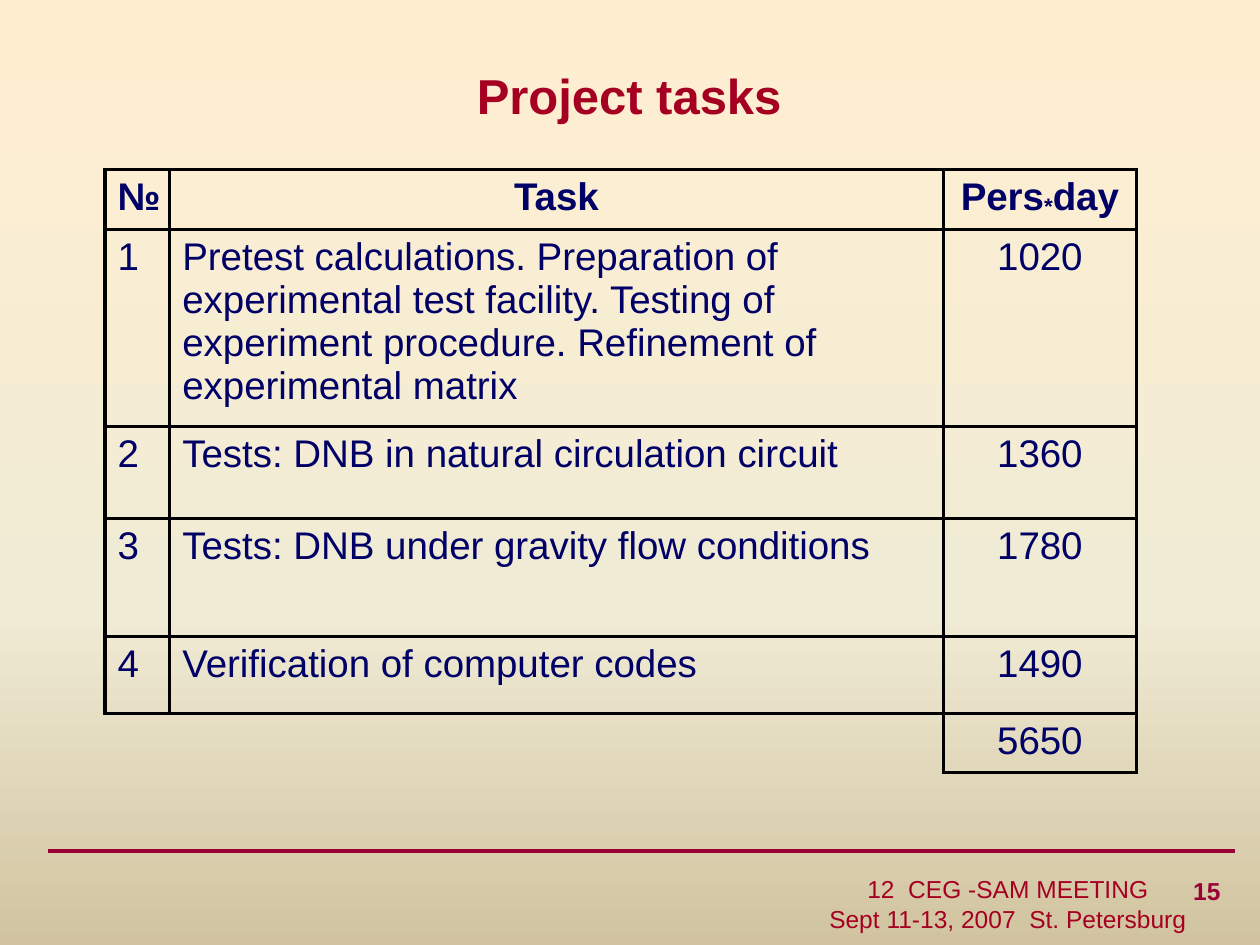
from copy import deepcopy
from dataclasses import dataclass

from pptx import Presentation
from pptx.dml.color import RGBColor as Rgb
from pptx.enum.shapes import MSO_CONNECTOR as Connector
from pptx.enum.text import MSO_ANCHOR as Anchor, PP_ALIGN as Align
from pptx.oxml.ns import qn
from pptx.oxml.xmlchemy import OxmlElement as Element
from pptx.util import Pt


@dataclass(frozen=True)
class Theme:
    font: str = "Arial"
    title_color: str = "A50021"
    accent: str = "990033"
    body_color: str = "000066"
    border_color: str = "000000"
    background: tuple = ((0, "FFEFD1"), (0.65, "F0EBD5"), (1, "D1C39F"))
    title_size: float = 28
    table_size: float = 22
    footer_size: float = 14
    line_width: float = 2.25


THEME = Theme()
PLAIN_TABLE = "{2D5ABB26-0587-4C30-8999-92F81FD0307C}"
COLUMNS = (37, 442, 110.5)
ROWS = (34, 105.5, 52.5, 67.5, 44, 32.5)
TASKS = (
    ("1", "Pretest calculations. Preparation of experimental test facility. "
          "Testing of experiment procedure. Refinement of experimental matrix", "1020"),
    ("2", "Tests: DNB in natural circulation circuit", "1360"),
    ("3", "Tests: DNB under gravity flow conditions", "1780"),
    ("4", "Verification of computer codes", "1490"),
)
HANGING_TASKS = ("3", "4")


def apply(target, formats):
    for name, value in formats.items():
        setattr(target, name, value)


class SlideBuilder:
    def __init__(self, deck, theme):
        self.theme = theme
        self.page = deck.slides.add_slide(deck.slide_layouts[6])

    def background(self):
        fill = self.page.background.fill
        fill.gradient()
        fill.gradient_angle = 270
        stop_list = self.page._element.find(".//" + qn("a:gsLst"))
        stop_list.append(deepcopy(stop_list[-1]))
        for stop, (position, color) in zip(fill.gradient_stops, self.theme.background):
            stop.position = position
            stop.color.rgb = Rgb.from_string(color)

    def add_span(self, para, text, size, color, bold=False, align=Align.LEFT):
        para.alignment = align
        span = para.add_run()
        span.text = text
        apply(span.font, {"name": self.theme.font, "size": Pt(size), "bold": bold})
        span.font.color.rgb = Rgb.from_string(color)
        return span

    def text(self, area, lines, size, color, bold=False, align=Align.CENTER,
             anchor=Anchor.MIDDLE):
        box = self.page.shapes.add_textbox(*map(Pt, area))
        frame = box.text_frame
        apply(frame, {"word_wrap": True, "vertical_anchor": anchor})
        for index, line in enumerate(lines):
            para = frame.add_paragraph() if index else frame.paragraphs[0]
            self.add_span(para, line, size, color, bold, align)

    def rule(self, left, right, top):
        line = self.page.shapes.add_connector(
            Connector.STRAIGHT, Pt(left), Pt(top), Pt(right), Pt(top))
        line.line.width = Pt(self.theme.line_width)
        line.line.color.rgb = Rgb.from_string(self.theme.accent)
        line._element.spPr.append(Element("a:effectLst"))

    def table(self, left, top, columns, rows):
        shape = self.page.shapes.add_table(
            len(rows), len(columns), Pt(left), Pt(top), Pt(sum(columns)), Pt(sum(rows)))
        table = shape.table
        apply(table, {"first_row": False, "horz_banding": False})
        table._tbl.tblPr.find(qn("a:tableStyleId")).text = PLAIN_TABLE
        for column, width in zip(table.columns, columns):
            column.width = Pt(width)
        for row, height in zip(table.rows, rows):
            row.height = Pt(height)
        return table

    def cell(self, cell, spans, bold=False, align=Align.LEFT, edges="LRTB"):
        """Fill a cell with (text, baseline percent) spans and draw the named edges."""
        para = cell.text_frame.paragraphs[0]
        for text, baseline in spans:
            span = self.add_span(para, text, self.theme.table_size,
                                 self.theme.body_color, bold, align)
            if baseline:
                span._r.get_or_add_rPr().set("baseline", str(baseline * 1000))
        for edge in "LRTB":
            self.border(cell, edge, edge in edges)
        cell.fill.background()
        return para

    def border(self, cell, edge, visible):
        line = Element(f"a:ln{edge}")
        if visible:
            line.set("w", str(Pt(self.theme.line_width)))
            fill, color = Element("a:solidFill"), Element("a:srgbClr")
            color.set("val", self.theme.border_color)
            fill.append(color)
        else:
            fill = Element("a:noFill")
        line.append(fill)
        cell._tc.get_or_add_tcPr().append(line)

    def hang(self, para, indent, after):
        apply(para, {"alignment": Align.JUSTIFY, "space_after": Pt(after)})
        properties = para._p.get_or_add_pPr()
        properties.set("marL", str(Pt(indent)))
        properties.set("indent", str(-Pt(indent)))


def add_task_table(builder):
    table = builder.table(60, 97, COLUMNS, ROWS)
    headings = ([("№", 0)], [("Task", 0)], [("Pers", 0), ("*", -10), ("day", 0)])
    for index, spans in enumerate(headings):
        builder.cell(table.cell(0, index), spans, bold=True, align=Align.CENTER)

    for row, (number, task, days) in enumerate(TASKS, start=1):
        builder.cell(table.cell(row, 0), [(number, 0)])
        para = builder.cell(table.cell(row, 1), [(task, 0)])
        if number in HANGING_TASKS:
            builder.hang(para, 30, 9)
        builder.cell(table.cell(row, 2), [(days, 0)], align=Align.CENTER)

    total = sum(int(days) for _, _, days in TASKS)
    last = len(ROWS) - 1
    builder.cell(table.cell(last, 0), [], edges="T")
    builder.cell(table.cell(last, 1), [], edges="TR")
    builder.cell(table.cell(last, 2), [(str(total), 0)], align=Align.CENTER)


def main():
    deck = Presentation()
    apply(deck, {"slide_width": Pt(720), "slide_height": Pt(540)})
    builder = SlideBuilder(deck, THEME)
    builder.background()
    builder.rule(27.5, 706, 486.5)
    builder.text((554.5, 491, 150, 36), ["15"], THEME.footer_size, THEME.accent,
                 bold=True, align=Align.RIGHT)
    builder.text((53.5, 29, 612, 50), ["Project tasks"], THEME.title_size,
                 THEME.title_color, bold=True)
    add_task_table(builder)
    builder.text((451, 496, 250, 41),
                 ["12  CEG -SAM MEETING", "Sept 11-13, 2007  St. Petersburg"],
                 THEME.footer_size, THEME.title_color, anchor=Anchor.TOP)
    deck.save("out.pptx")


if __name__ == "__main__":
    main()
